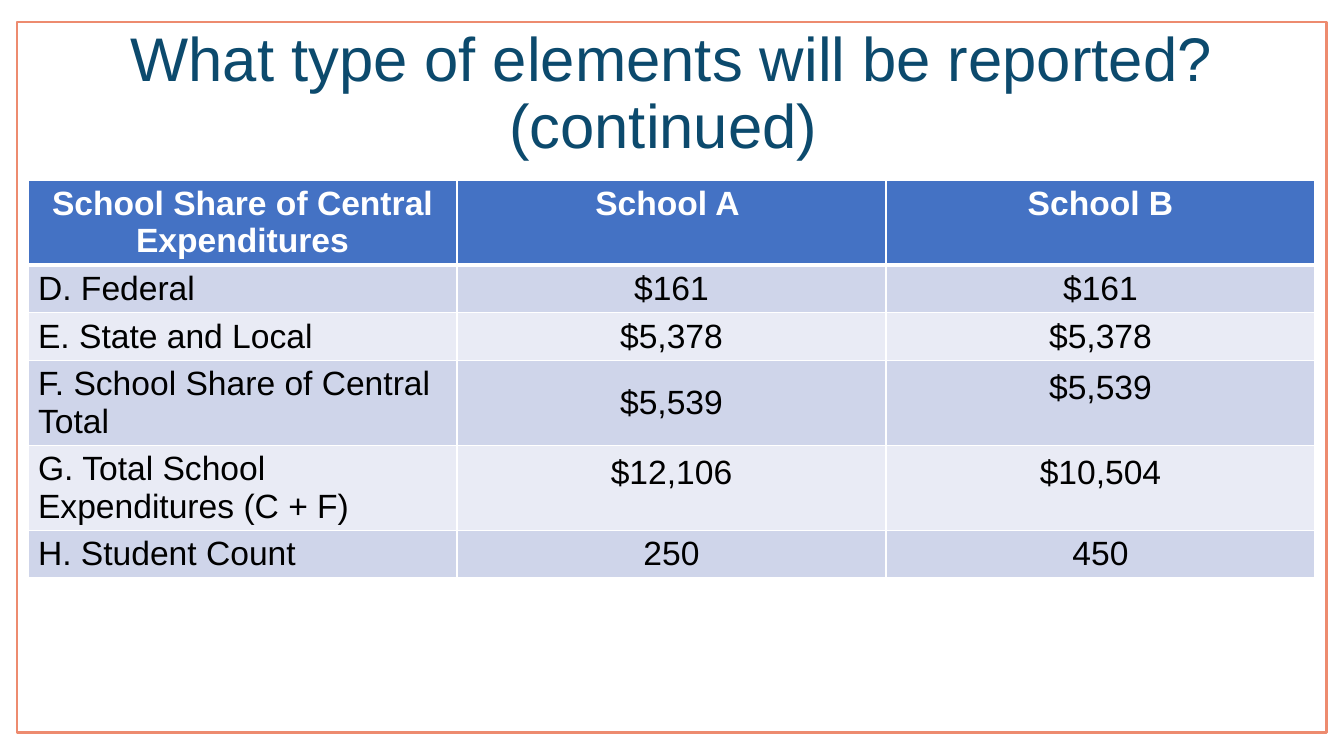
from lxml import etree
from pptx import Presentation
from pptx.dml.color import RGBColor
from pptx.enum.shapes import MSO_SHAPE
from pptx.enum.text import MSO_ANCHOR, MSO_AUTO_SIZE, PP_ALIGN
from pptx.oxml.ns import qn
from pptx.util import Emu, Pt

RECTANGLE = MSO_SHAPE.RECTANGLE
TOP, MIDDLE = MSO_ANCHOR.TOP, MSO_ANCHOR.MIDDLE
LEFT, CENTER = PP_ALIGN.LEFT, PP_ALIGN.CENTER
NO_AUTOFIT = MSO_AUTO_SIZE.NONE

EMU_PER_INCH = 914400
PX_PER_INCH = 100.8
TITLE_ONLY_LAYOUT = 5
FONT = "Arial"

WHITE = RGBColor(0xFF, 0xFF, 0xFF)
BLACK = RGBColor(0x00, 0x00, 0x00)
NAVY = RGBColor(0x0C, 0x4A, 0x6D)
CORAL = RGBColor(0xED, 0x8B, 0x6F)
HEADER_BLUE = RGBColor(0x44, 0x72, 0xC4)
BANDS = (RGBColor(0xCF, 0xD5, 0xEA), RGBColor(0xE9, 0xEB, 0xF5))

TITLE = "What type of elements will be reported? (continued) "
ROWS = [
    ("School Share of Central Expenditures", "School A ", "School B"),
    ("D. Federal", "$161", "$161"),
    ("E. State and Local", "$5,378", "$5,378"),
    ("F. School Share of Central Total", "$5,539", "$5,539"),
    ("G. Total School Expenditures (C + F)", "$12,106", "$10,504"),
    ("H. Student Count", "250", "450"),
]
ROW_HEIGHTS = (85, 47, 47, 85, 85, 47)
COLUMN_WIDTH = 429
RAISED_CELLS = {(3, 2), (4, 1), (4, 2)}
RAISED_MARGIN = 9


def px(length):
    return Emu(round(length * EMU_PER_INCH / PX_PER_INCH))


def add_run(paragraph, text, size, color, bold=False):
    run = paragraph.add_run()
    run.text = text
    run.font.name = FONT
    run.font.size = Pt(size)
    run.font.bold = bold
    run.font.color.rgb = color


def add_frame(slide, left, top, width, height):
    frame = slide.shapes.add_shape(RECTANGLE, px(left), px(top), px(width), px(height))
    frame.shadow.inherit = False
    frame.fill.background()
    frame.line.color.rgb = CORAL
    frame.line.width = Pt(2)


def fill_title(slide, left, top, width, height):
    title = slide.shapes.title
    title.left, title.top = px(left), px(top)
    title.width, title.height = px(width), px(height)
    text_frame = title.text_frame
    text_frame.word_wrap = True
    text_frame.auto_size = NO_AUTOFIT
    text_frame.vertical_anchor = MIDDLE
    paragraph = text_frame.paragraphs[0]
    paragraph.alignment = CENTER
    paragraph.line_spacing = 0.9
    add_run(paragraph, TITLE, 44, NAVY)


def set_borders(cell, bottom_points):
    properties = cell._tc.get_or_add_tcPr()
    for side, points in (("L", 1), ("R", 1), ("T", 1), ("B", bottom_points)):
        line = etree.SubElement(properties, qn(f"a:ln{side}"), w=str(Pt(points)))
        fill = etree.SubElement(line, qn("a:solidFill"))
        etree.SubElement(fill, qn("a:srgbClr"), val=str(WHITE))


def fill_cell(cell, text, row, column):
    is_header = row == 0
    is_raised = (row, column) in RAISED_CELLS
    set_borders(cell, 3 if is_header else 1)
    cell.fill.solid()
    cell.fill.fore_color.rgb = HEADER_BLUE if is_header else BANDS[(row - 1) % 2]
    cell.vertical_anchor = TOP if is_header or is_raised else MIDDLE
    if is_raised:
        cell.margin_top = px(RAISED_MARGIN)
    paragraph = cell.text_frame.paragraphs[0]
    paragraph.alignment = CENTER if is_header or column > 0 else LEFT
    add_run(paragraph, text, 24, WHITE if is_header else BLACK, bold=is_header)


def add_expenditure_table(slide, left, top):
    column_count = len(ROWS[0])
    table = slide.shapes.add_table(
        len(ROWS), column_count, px(left), px(top),
        px(column_count * COLUMN_WIDTH), px(sum(ROW_HEIGHTS)),
    ).table
    for column in table.columns:
        column.width = px(COLUMN_WIDTH)
    for row, (texts, height) in enumerate(zip(ROWS, ROW_HEIGHTS)):
        table.rows[row].height = px(height)
        for column, text in enumerate(texts):
            fill_cell(table.cell(row, column), text, row, column)


def main():
    presentation = Presentation()
    presentation.slide_width, presentation.slide_height = px(1344), px(756)
    slide = presentation.slides.add_slide(presentation.slide_layouts[TITLE_ONLY_LAYOUT])
    add_frame(slide, 17, 22, 1310, 711)
    fill_title(slide, 17, 22, 1310, 146)
    add_expenditure_table(slide, 28, 180)
    presentation.save("out.pptx")


if __name__ == "__main__":
    main()
